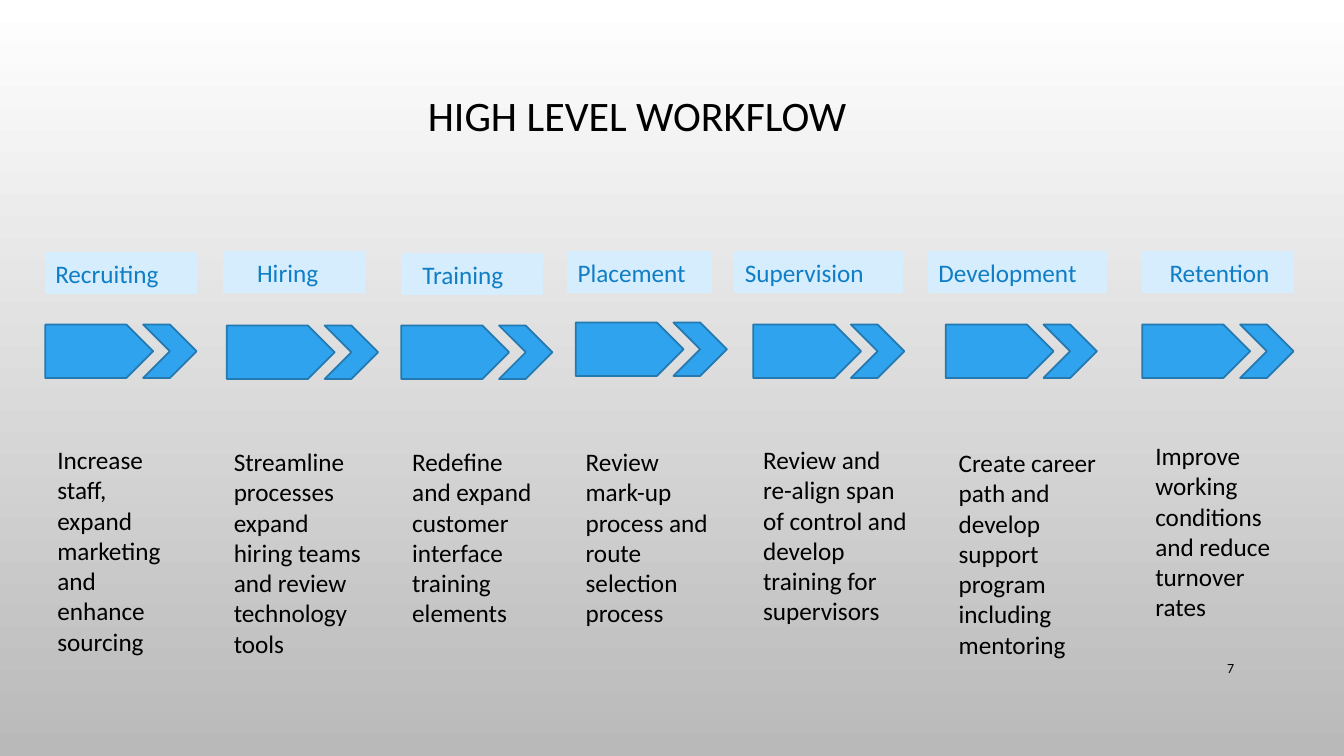
from pptx import Presentation
from pptx.dml.color import RGBColor
from pptx.enum.shapes import MSO_SHAPE as Preset
from pptx.enum.text import MSO_ANCHOR as Anchor, PP_ALIGN as Align
from pptx.util import Inches, Pt

WHITE = RGBColor(0xFF, 0xFF, 0xFF)
GREY = RGBColor(0xB9, 0xB9, 0xB9)
BLACK = RGBColor(0x00, 0x00, 0x00)
ARROW_FILL = RGBColor(0x2F, 0xA3, 0xEE)
ARROW_LINE = RGBColor(0x23, 0x79, 0xB0)
LABEL_FILL = RGBColor(0xD5, 0xED, 0xFC)
LABEL_TEXT = RGBColor(0x10, 0x7E, 0xC6)

ARROW_HEIGHT = 0.53
BODY_WIDTH = 1.07
CHEVRON_OFFSET = 0.97


def write(box, text, size=18, color=BLACK, align=Align.LEFT, anchor=Anchor.TOP,
          indent=0, spacing=None):
    """Fill a box with text, one paragraph per line."""
    frame = box.text_frame
    frame.word_wrap = True
    frame.vertical_anchor = anchor
    frame.margin_left = Inches(0.1 + indent)
    frame.text = text
    for para in frame.paragraphs:
        para.alignment = align
        para.line_spacing = spacing
        para.font.size = Pt(size)
        para.font.name = "Calibri"
        para.font.color.rgb = color


def add_block(preset, left, top, width, height, fill, line, line_width):
    """Add a flat filled shape."""
    block = page.shapes.add_shape(
        preset, Inches(left), Inches(top), Inches(width), Inches(height))
    block.shadow.inherit = False
    block.fill.solid()
    block.fill.fore_color.rgb = fill
    block.line.color.rgb = line
    block.line.width = Pt(line_width)
    return block


deck = Presentation()
deck.slide_width, deck.slide_height = Inches(13.33), Inches(7.5)
page = deck.slides.add_slide(deck.slide_layouts[6])

# Background: white at the top to grey at the bottom
backdrop = page.background.fill
backdrop.gradient()
backdrop.gradient_angle = 270
for stop, color in zip(backdrop.gradient_stops, (WHITE, GREY)):
    stop.color.rgb = color

# Title
title = page.shapes.add_textbox(Inches(3.93), Inches(0.9), Inches(4.78), Inches(0.56))
write(title, "HIGH LEVEL WORKFLOW", size=30, align=Align.CENTER, spacing=0.9)

# Stages: label (name, left, top, width, indent), arrow (left, top),
# description (left, top, width, height, text)
stages = [
    (("Recruiting", 0.45, 2.51, 1.5, 0), (0.45, 3.22),
     (0.47, 4.36, 1.49, 2.22,
      "Increase\nstaff,\nexpand marketing\nand enhance sourcing")),
    (("Hiring", 2.22, 2.5, 1.4, 0.23), (2.25, 3.23),
     (2.22, 4.38, 1.51, 2.22,
      "Streamline\nprocesses expand hiring teams and review technology\ntools")),
    (("Training", 3.98, 2.52, 1.4, 0.11), (3.98, 3.23),
     (3.99, 4.38, 1.49, 2.22,
      "Redefine\nand expand customer interface training elements")),
    (("Placement", 5.63, 2.5, 1.43, 0), (5.71, 3.2),
     (5.71, 4.38, 1.49, 1.92,
      "Review mark-up process and route selection\nprocess")),
    (("Supervision", 7.29, 2.5, 1.66, 0), (7.47, 3.22),
     (7.47, 4.36, 1.64, 1.92,
      "Review and re-align span of control and develop training for supervisors")),
    (("Development", 9.21, 2.5, 1.77, 0), (9.38, 3.22),
     (9.41, 4.39, 1.77, 2.22,
      "Create career path and develop support program including mentoring")),
    (("Retention", 11.33, 2.5, 1.5, 0.17), (11.33, 3.22),
     (11.36, 4.32, 1.49, 2.22,
      "Improve working conditions and reduce turnover rates")),
]

for label, arrow, description in stages:
    # Label
    name, left, top, width, indent = label
    tag = add_block(Preset.RECTANGLE, left, top, width, 0.4, LABEL_FILL, LABEL_FILL, 0.75)
    write(tag, name, color=LABEL_TEXT, indent=indent)

    # Arrow: pentagon body and chevron tip
    left, top = arrow
    for preset, offset, width in ((Preset.PENTAGON, 0, BODY_WIDTH),
                                  (Preset.CHEVRON, CHEVRON_OFFSET, ARROW_HEIGHT)):
        add_block(preset, left + offset, top, width, ARROW_HEIGHT,
                  ARROW_FILL, ARROW_LINE, 1.25)

    # Description
    *place, text = description
    box = page.shapes.add_textbox(*map(Inches, place))
    write(box, text)

# Slide number
number = page.shapes.add_textbox(Inches(11.5), Inches(6.43), Inches(0.84), Inches(0.4))
write(number, "7", size=10, align=Align.RIGHT, anchor=Anchor.MIDDLE)

deck.save("out.pptx")
